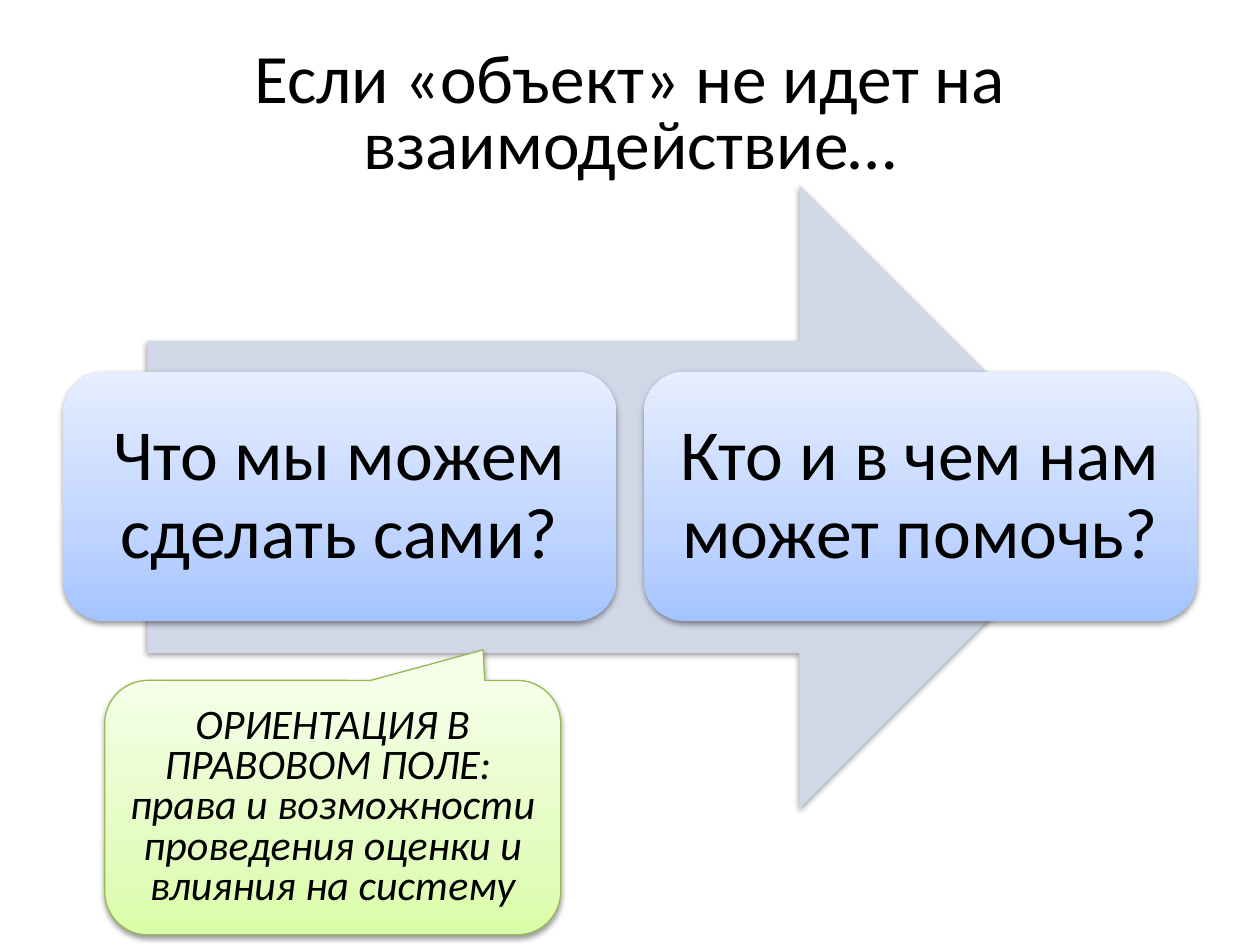
from dataclasses import dataclass

import lxml.etree
import pptx
import pptx.dml.color
import pptx.enum.shapes
import pptx.enum.text
import pptx.oxml
import pptx.oxml.ns
import pptx.util

Pt = pptx.util.Pt
qn = pptx.oxml.ns.qn
Preset = pptx.enum.shapes.MSO_SHAPE


@dataclass(frozen=True)
class Theme:
    font: str = "Calibri"
    title_size: float = 39.6
    question_size: float = 41
    note_size: float = 24
    text: str = "000000"
    arrow: str = "D0D8E8"
    note_line: str = "98B955"
    # Gradient stops as (percent, colour), from bottom to top
    question_fill: tuple = ((0, "A4C4FF"), (35, "BFD4FF"), (100, "E6EEFF"))
    note_fill: tuple = ((0, "DAFDA7"), (35, "E4FCC2"), (100, "F5FFE7"))


@dataclass(frozen=True)
class Box:
    left: float
    top: float
    width: float
    height: float

    def lengths(self) -> tuple:
        return Pt(self.left), Pt(self.top), Pt(self.width), Pt(self.height)


@dataclass(frozen=True)
class TextStyle:
    size: float
    spacing: float
    italic: bool = False
    margin: float | None = None


THEME = Theme()
QUESTIONS = ("Что мы можем сделать сами?", "Кто и в чем нам может помочь? ")
FIRST_QUESTION = Box(36, 212.4, 316.2, 142.6)
QUESTION_GAP = 15.6
NOTE = (
    "ОРИЕНТАЦИЯ В ПРАВОВОМ ПОЛЕ: ",
    "права и возможности проведения оценки и влияния на систему",
)


def rgb(colour: str) -> pptx.dml.color.RGBColor:
    return pptx.dml.color.RGBColor.from_string(colour)


def write_text(shape, paragraphs: tuple, style: TextStyle) -> None:
    frame = shape.text_frame
    frame.word_wrap = True
    frame.auto_size = pptx.enum.text.MSO_AUTO_SIZE.NONE
    frame.vertical_anchor = pptx.enum.text.MSO_ANCHOR.MIDDLE
    if style.margin is not None:
        frame.margin_left = frame.margin_right = Pt(style.margin)
        frame.margin_top = frame.margin_bottom = Pt(style.margin)
    for index, words in enumerate(paragraphs):
        paragraph = frame.add_paragraph() if index else frame.paragraphs[0]
        paragraph.alignment = pptx.enum.text.PP_ALIGN.CENTER
        paragraph.line_spacing = style.spacing
        run = paragraph.add_run()
        run.text = words
        run.font.name = THEME.font
        run.font.size = Pt(style.size)
        run.font.italic = style.italic
        run.font.color.rgb = rgb(THEME.text)


def fill_gradient(shape, stops: tuple) -> None:
    shape.fill.gradient()
    shape.fill.gradient_angle = 90
    stop_list = shape._element.spPr.find(qn("a:gradFill")).find(qn("a:gsLst"))
    for old_stop in list(stop_list):
        stop_list.remove(old_stop)
    for percent, colour in stops:
        stop = lxml.etree.SubElement(stop_list, qn("a:gs"), pos=str(percent * 1000))
        lxml.etree.SubElement(stop, qn("a:srgbClr"), val=colour)


def add_soft_shadow(shape) -> None:
    shape.shadow.inherit = False
    effects = shape._element.spPr.find(qn("a:effectLst"))
    shadow = lxml.etree.SubElement(
        effects, qn("a:outerShdw"), blurRad=str(Pt(3.1)), dist=str(Pt(1.6)),
        dir="5400000", rotWithShape="0")
    colour = lxml.etree.SubElement(shadow, qn("a:srgbClr"), val="000000")
    lxml.etree.SubElement(colour, qn("a:alpha"), val="38000")


def add_block(slide, preset, box: Box, fill: str | tuple, line: str | None = None):
    block = slide.shapes.add_shape(preset, *box.lengths())
    if isinstance(fill, str):
        block.fill.solid()
        block.fill.fore_color.rgb = rgb(fill)
    else:
        fill_gradient(block, fill)
    if line:
        block.line.color.rgb = rgb(line)
        block.line.width = Pt(0.75)
    else:
        block.line.fill.background()
    add_soft_shadow(block)
    return block


def main() -> None:
    deck = pptx.Presentation()
    deck.slide_width, deck.slide_height = Pt(720), Pt(540)
    slide = deck.slides.add_slide(deck.slide_layouts[5])

    # Title
    title = slide.shapes.title
    title.left, title.top, title.width, title.height = Box(36, 21.6, 648, 90).lengths()
    write_text(title, ("Если «объект» не идет на взаимодействие…",),
               TextStyle(THEME.title_size, 0.8))

    # Arrow behind the questions
    add_block(slide, Preset.RIGHT_ARROW, Box(84.2, 105.8, 550.8, 356.4), THEME.arrow)

    # Two questions side by side
    step = FIRST_QUESTION.width + QUESTION_GAP
    for index, words in enumerate(QUESTIONS):
        box = Box(FIRST_QUESTION.left + index * step, FIRST_QUESTION.top,
                  FIRST_QUESTION.width, FIRST_QUESTION.height)
        question = add_block(slide, Preset.ROUNDED_RECTANGLE, box, THEME.question_fill)
        write_text(question, (words,), TextStyle(THEME.question_size, 0.9, margin=12.2))

    # Callout on the first question
    note = add_block(slide, Preset.ROUNDED_RECTANGULAR_CALLOUT,
                     Box(59.8, 388.8, 260.6, 145.4), THEME.note_fill, THEME.note_line)
    for index, value in enumerate((0.33, -0.62, 0.17)):
        note.adjustments[index] = value
    write_text(note, NOTE, TextStyle(THEME.note_size, 0.8, italic=True))

    deck.save("out.pptx")


if __name__ == "__main__":
    main()
